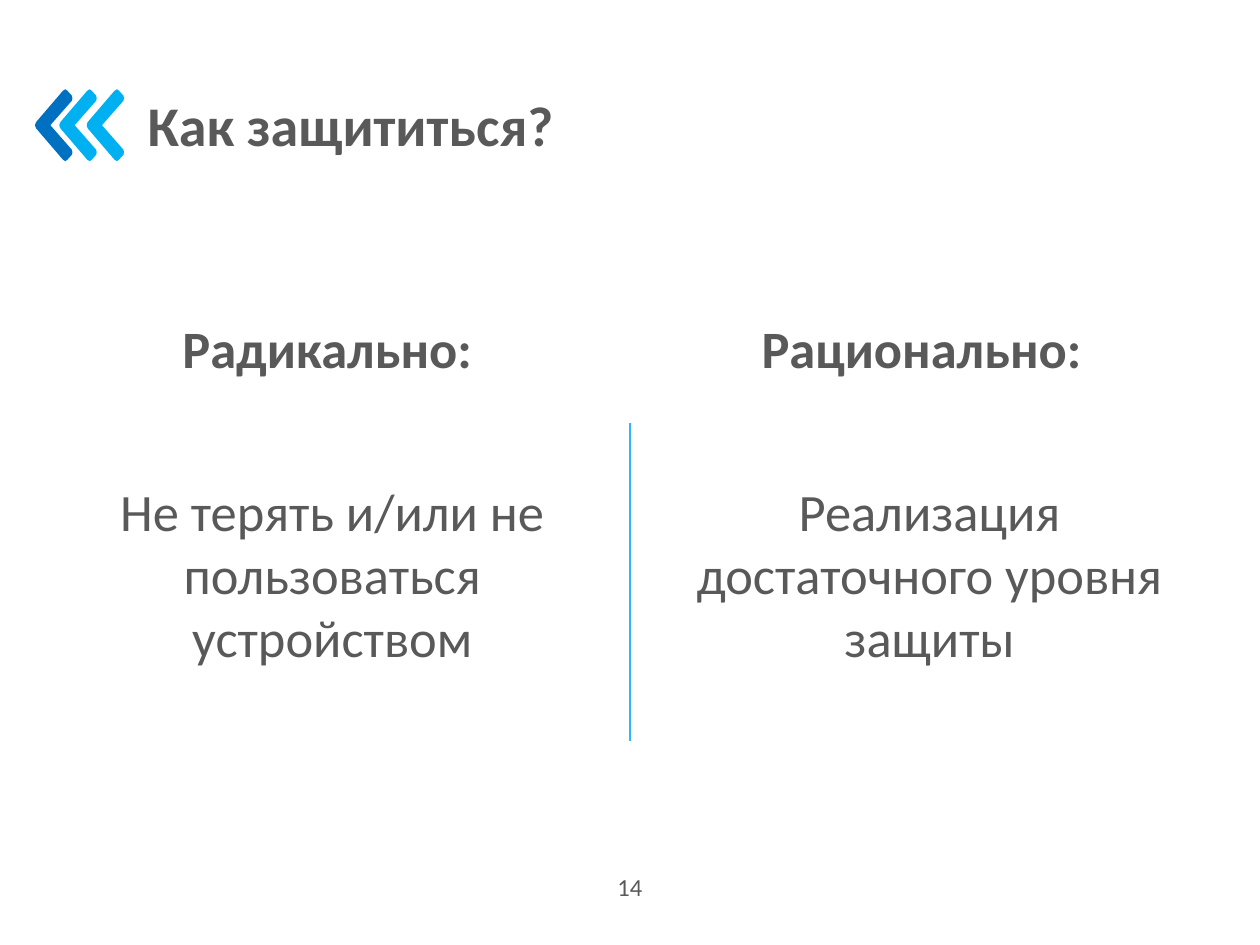
from dataclasses import dataclass

from lxml.etree import SubElement
from pptx import Presentation
from pptx.dml.color import RGBColor as Color
from pptx.enum.shapes import MSO_CONNECTOR as Connector
from pptx.enum.text import MSO_ANCHOR as Anchor, PP_ALIGN as Align
from pptx.oxml.ns import qn
from pptx.util import Cm, Pt


@dataclass(frozen=True)
class Theme:
    font: str = "Calibri"
    text: Color = Color(0x59, 0x59, 0x59)
    dark_blue: Color = Color(0x00, 0x70, 0xC0)
    light_blue: Color = Color(0x00, 0xB0, 0xF0)
    divider: Color = Color(0x31, 0xB6, 0xFD)
    title_size: int = 32
    body_size: int = 30
    number_size: int = 14


class SlideBuilder:
    """Holds the theme and the current slide."""

    # Upper half of a left-pointing chevron in cm, from its tip to its notch
    CHEVRON_HEIGHT = 1.45
    CHEVRON_HALF = [(0, 0.71), (0.02, 0.66), (0.56, 0.03), (0.61, 0), (0.65, 0.03),
                    (0.74, 0.13), (0.75, 0.18), (0.74, 0.23), (0.31, 0.72)]

    def __init__(self, deck, theme):
        self.theme = theme
        self.slide = deck.slides.add_slide(deck.slide_layouts[5])

    def set_text(self, shape, text, size, bold=False, align=Align.CENTER,
                 anchor=Anchor.TOP, wrap=True, spacing=0):
        frame = shape.text_frame
        frame.text = text
        frame.word_wrap = wrap
        frame.vertical_anchor = anchor
        para = frame.paragraphs[0]
        para.alignment = align
        para.space_before = para.space_after = Pt(spacing)
        para.font.name = self.theme.font
        para.font.size = Pt(size)
        para.font.bold = bold
        para.font.color.rgb = self.theme.text

    def title(self, text, left, top, width, height):
        title = self.slide.shapes.title
        title.left, title.top = Cm(left), Cm(top)
        title.width, title.height = Cm(width), Cm(height)
        self.set_text(title, text, self.theme.title_size, bold=True, align=Align.LEFT)

    def text(self, text, left, top, width, height, size, **style):
        box = self.slide.shapes.add_textbox(Cm(left), Cm(top), Cm(width), Cm(height))
        self.set_text(box, text, size, **style)

    def chevron(self, left, top, color):
        lower = [(x, self.CHEVRON_HEIGHT - y) for x, y in reversed(self.CHEVRON_HALF)]
        points = [(Cm(left + x), Cm(top + y)) for x, y in self.CHEVRON_HALF + lower]
        outline = self.slide.shapes.build_freeform(*points[0])
        outline.add_line_segments(points[1:], close=True)
        shape = outline.convert_to_shape()
        shape.shadow.inherit = False
        shape.fill.solid()
        shape.fill.fore_color.rgb = color
        shape.line.fill.background()

    def vertical_line(self, x, top, bottom):
        line = self.slide.shapes.add_connector(
            Connector.STRAIGHT, Cm(x), Cm(top), Cm(x), Cm(bottom))
        line.line.color.rgb = self.theme.divider
        line.line.width = Pt(1.5)
        SubElement(line._element.spPr, qn("a:effectLst"))


def main():
    theme = Theme()
    deck = Presentation()
    deck.slide_width, deck.slide_height = Cm(25.4), Cm(19.05)
    page = SlideBuilder(deck, theme)

    # Heading with its chevrons
    for left, color in [(0.71, theme.dark_blue), (1.2, theme.light_blue),
                        (1.75, theme.light_blue)]:
        page.chevron(left, 1.8, color)
    page.title("Как защититься?", 2.72, 1.7, 22, 1.62)

    # Two approaches on either side of the divider
    page.vertical_line(12.7, 8.53, 14.94)
    approaches = [
        ("Радикально:", 3.4, 6.4, "Не терять и/или не пользоваться устройством", 1.7),
        ("Рационально:", 15.06, 7.04, "Реализация достаточного уровня защиты", 13.74),
    ]
    for heading, heading_left, heading_width, body, body_left in approaches:
        page.text(heading, heading_left, 6.25, heading_width, 1.55,
                  theme.body_size, bold=True, wrap=False)
        page.text(body, body_left, 9.54, 10, 4.11, theme.body_size, spacing=6)

    # Page number
    page.text("14", 11.08, 17.38, 3.24, 1.01, theme.number_size, anchor=Anchor.MIDDLE)

    deck.save("out.pptx")


if __name__ == "__main__":
    main()
